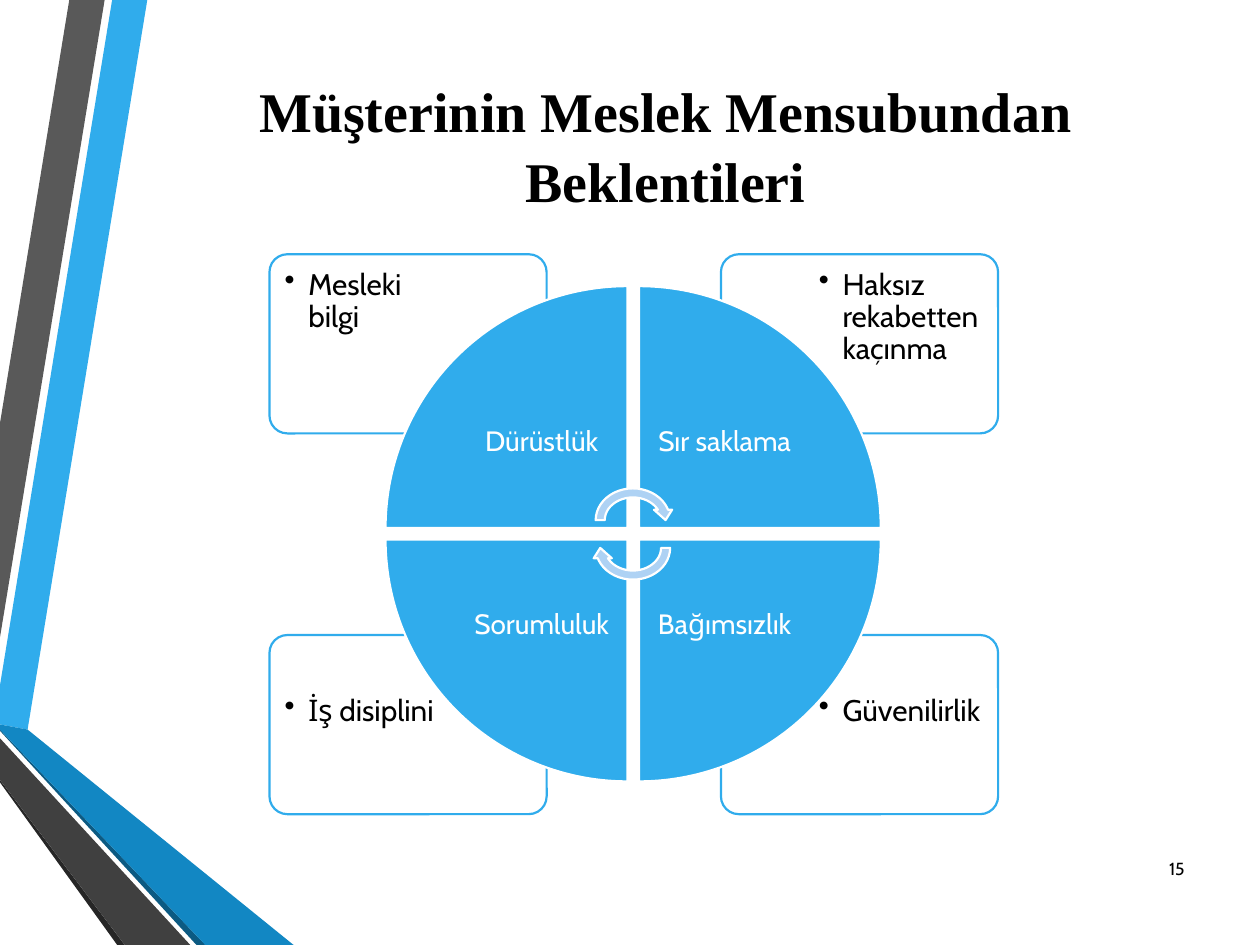
from lxml import etree
from pptx import Presentation
from pptx.dml.color import RGBColor as RGB
from pptx.enum.shapes import MSO_SHAPE as SHAPE
from pptx.enum.text import MSO_ANCHOR as ANCHOR, PP_ALIGN as ALIGN
from pptx.oxml.ns import qn
from pptx.util import Pt

COLORS = {
    "blue": "30ACEC", "blue_dark": "1287C3", "blue_deep": "0C5A82",
    "blue_pale": "AED2F4", "gray": "595959", "gray_dark": "404040",
    "gray_deep": "262626", "white": "FFFFFF", "black": "000000",
}

prs = Presentation()
prs.slide_width, prs.slide_height = Pt(720), Pt(540)
slide = prs.slides.add_slide(prs.slide_layouts[6])
shapes = slide.shapes


def paint(sp, fill, line=None):
    sp.shadow.inherit = False
    sp.fill.solid()
    sp.fill.fore_color.rgb = RGB.from_string(COLORS[fill])
    if line:
        sp.line.color.rgb = RGB.from_string(COLORS[line])
        sp.line.width = Pt(1.25)
    else:
        sp.line.fill.background()


def add_text(box, text, size, color="black", font="Cabin", bold=False,
             align=ALIGN.LEFT, anchor=ANCHOR.MIDDLE, inset=None, spacing=None):
    tf = shapes.add_textbox(*map(Pt, box)).text_frame
    tf.word_wrap = True
    tf.vertical_anchor = anchor
    if inset is not None:
        for side in ("left", "top", "right", "bottom"):
            setattr(tf, f"margin_{side}", Pt(inset))
    p = tf.paragraphs[0]
    p.alignment, p.line_spacing = align, spacing
    r = p.add_run()
    r.text = text
    for name, value in {"name": font, "size": Pt(size), "bold": bold}.items():
        setattr(r.font, name, value)
    r.font.color.rgb = RGB.from_string(COLORS[color])
    return p


# Ribbons along the left edge
ribbons = [
    ("blue", [(0, 391.7), (0, 414), (15.8, 416.9), (84.2, 0), (64.1, 0)]),
    ("gray", [(59.8, 0), (39.6, 0), (0, 241.9), (0, 364.3)]),
    ("gray_deep", [(0, 445.7), (0, 447.1), (67, 540), (71.3, 540)]),
    ("blue_deep", [(0, 416.9), (0, 417.6), (112.3, 540), (117.4, 540)]),
    ("blue_dark", [(0, 416.9), (117.4, 540), (167.8, 540), (15.8, 416.9), (0, 414)]),
    ("gray_dark", [(0, 445.7), (71.3, 540), (108.7, 540), (0, 421.9)]),
]
for color, outline in ribbons:
    points = [(Pt(x), Pt(y)) for x, y in outline]
    builder = shapes.build_freeform(*points[0])
    builder.add_line_segments(points[1:], close=True)
    paint(builder.convert_to_shape(), color)

# Title
add_text((77, 36, 607, 92), "Müşterinin Meslek Mensubundan Beklentileri", 32,
         font="Times New Roman", bold=True, align=ALIGN.CENTER, spacing=1.05)

# Corner boxes with bullets: column, row, text
corners = [
    (1, 1, "Güvenilirlik"),
    (0, 1, "İş disiplini"),
    (1, 0, "Haksız rekabetten kaçınma"),
    (0, 0, "Mesleki bilgi"),
]
for col, row, text in corners:
    sp = shapes.add_shape(SHAPE.ROUNDED_RECTANGLE, Pt(154 + 258 * col),
                          Pt(145.3 + 217.6 * row), Pt(158.4), Pt(102.4))
    sp.adjustments[0] = 0.1
    paint(sp, "white", "blue")
    fill_color = sp.fill._xPr.find(qn("a:solidFill"))[0]
    etree.SubElement(fill_color, qn("a:alpha"), val="90000")
    p = add_text((156.2 + 305.3 * col, 147.6 + 243.4 * row, 105.8, 72), text, 17,
                 anchor=ANCHOR.TOP, inset=6.5, spacing=0.9)
    pPr = p._p.get_or_add_pPr()
    pPr.set("marL", str(Pt(13.5)))
    pPr.set("indent", str(-Pt(13.5)))
    etree.SubElement(pPr, qn("a:buChar"), char="•")

# Quarter wedges, clockwise from top left
WEDGE, LABEL = 138.2, 98
wedges = [(0, 0, "Dürüstlük"), (1, 0, "Sır saklama"),
          (1, 1, "Bağımsızlık"), (0, 1, "Sorumluluk")]
for i, (col, row, text) in enumerate(wedges):
    x, y = 220.3 + 144.8 * col, 163.5 + 144.8 * row
    sp = shapes.add_shape(SHAPE.PIE_WEDGE, Pt(x), Pt(y), Pt(WEDGE), Pt(WEDGE))
    sp.rotation = 90 * i
    paint(sp, "blue", "white")
    label_x = x + (WEDGE - LABEL) * (1 - col)
    label_y = y + (WEDGE - LABEL) * (1 - row)
    add_text((label_x, label_y, LABEL, LABEL), text, 16, color="white",
             align=ALIGN.CENTER, inset=8.5, spacing=0.9)

# Circular arrows at the centre
for y, angle in ((276.5, 0), (292.3, 180)):
    sp = shapes.add_shape(SHAPE.CIRCULAR_ARROW, Pt(337.8), Pt(y), Pt(47.7), Pt(41.5))
    sp.rotation = angle
    paint(sp, "blue_pale", "white")

# Slide number
add_text((651.6, 481.7, 32.4, 28.8), "15", 10, align=ALIGN.RIGHT)

prs.save("out.pptx")
